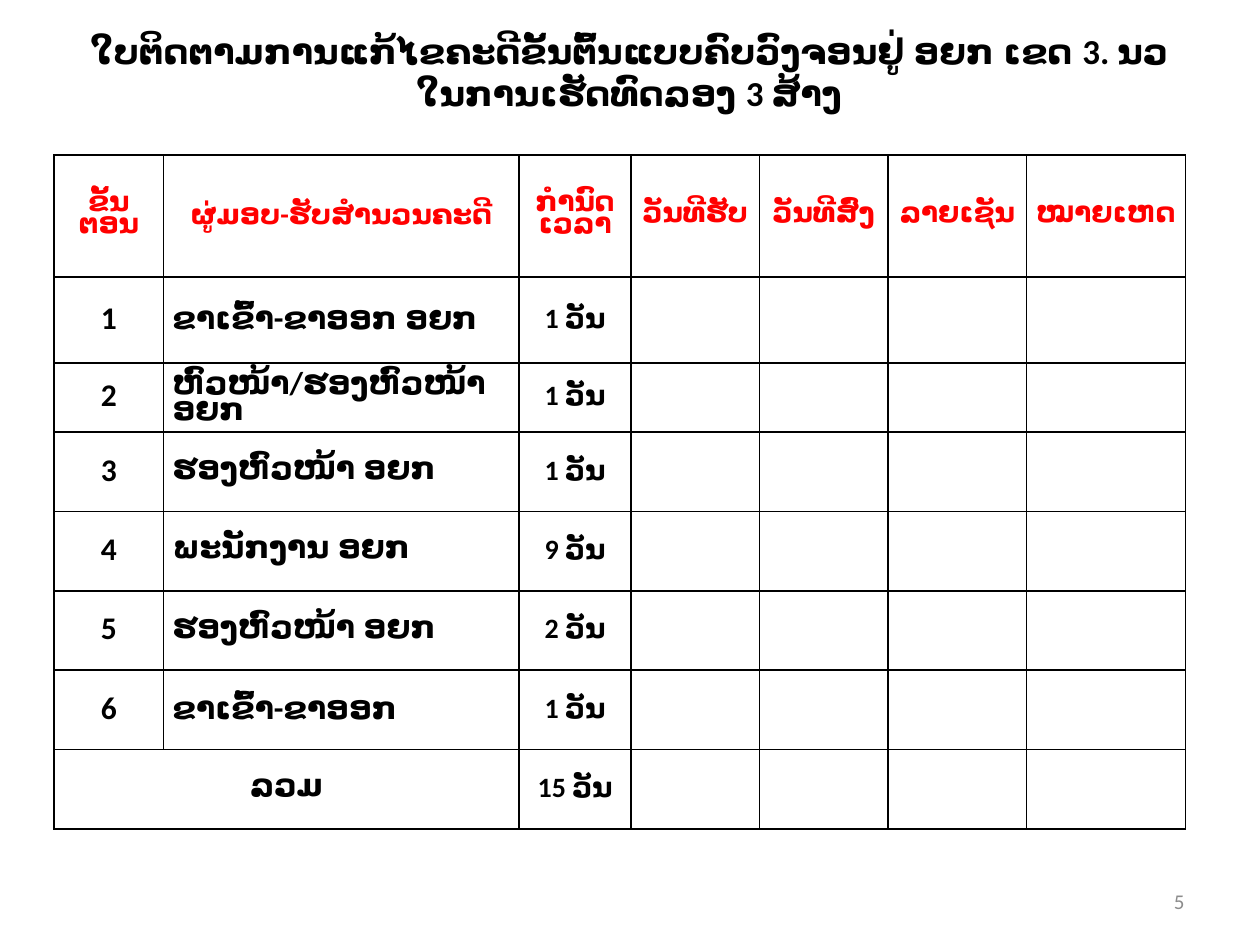
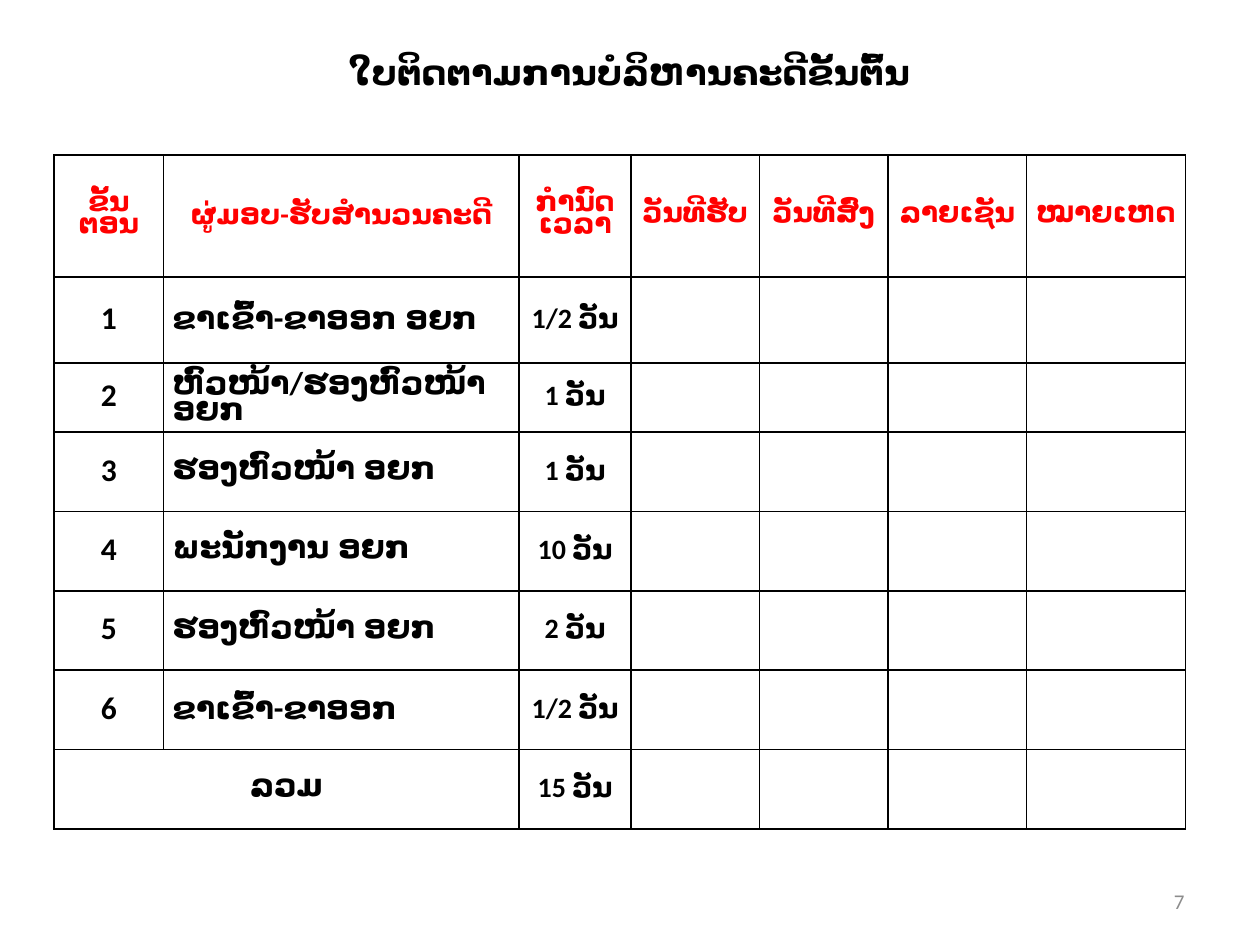
from dataclasses import dataclass

from lxml import etree
from pptx import Presentation
from pptx.dml.color import RGBColor
from pptx.enum.text import MSO_ANCHOR, PP_ALIGN
from pptx.oxml.ns import qn
from pptx.util import Inches, Pt

BLACK = RGBColor(0x00, 0x00, 0x00)
RED = RGBColor(0xFF, 0x00, 0x00)
GREY = RGBColor(0x8C, 0x8C, 0x8C)
FONT = "Calibri"
LEFT, CENTER, RIGHT = PP_ALIGN.LEFT, PP_ALIGN.CENTER, PP_ALIGN.RIGHT
MIDDLE = MSO_ANCHOR.MIDDLE
TITLE_ONLY = 5

COLUMN_WIDTHS = [0.87, 2.82, 0.89, 1.02, 1.02, 1.1, 1.26]
ROW_HEIGHTS = [0.97, 0.68, 0.55] + [0.63] * 5
HEADERS = ["ຂັ້ນ\nຕອນ", "ຜູ່ມອບ-ຮັບສໍານວນຄະດີ", "ກໍານົດເວລາ", "ວັນທີຮັບ",
           "ວັນທີສົ່ງ", "ລາຍເຊັນ", "ໝາຍເຫດ"]
HANDLERS = ["ຂາເຂົ້າ-ຂາອອກ ອຍກ", "ຫົວໜ້າ/ຮອງຫົວໜ້າ ອຍກ", "ຮອງຫົວໜ້າ ອຍກ",
            "ພະນັກງານ ອຍກ", "ຮອງຫົວໜ້າ ອຍກ", "ຂາເຂົ້າ-ຂາອອກ"]
TOTAL_LABEL = "ລວມ"
DAY = "ວັນ"


@dataclass
class TrackingForm:
    title: str
    days: list[str]
    total: str
    page: str


@dataclass
class TextStyle:
    size: int
    color: RGBColor = BLACK
    align: PP_ALIGN = CENTER
    bold: bool = True
    outlined: bool = False
    spacing: float = 1.0


TITLE = TextStyle(20)
HEADER = TextStyle(16, RED, outlined=True, spacing=0.8)
STEP = TextStyle(18, spacing=0.8)
HANDLER = TextStyle(18, align=LEFT, spacing=0.8)
DURATION = TextStyle(16, spacing=0.8)
PAGE = TextStyle(12, GREY, RIGHT, bold=False)

FORMS = [
    TrackingForm("ໃບຕິດຕາມການແກ້ໄຂຄະດີຂັ້ນຕົ້ນແບບຄົບວົງຈອນຢູ່ ອຍກ ເຂດ 3. ນວ\n"
                 "ໃນການເຮັດທົດລອງ 3 ສ້າງ",
                 ["1", "1", "1", "9", "2", "1"], "15", "5"),
    TrackingForm("ໃບຕິດຕາມການບໍລິຫານຄະດີຂັ້ນຕົ້ນ",
                 ["1/2", "1", "1", "10", "2", "1/2"], "15", "7"),
]


def add_line(parent, tag: str, width: float, color: RGBColor):
    ln = etree.SubElement(parent, qn(tag), w=str(Pt(width)))
    fill = etree.SubElement(ln, qn("a:solidFill"))
    etree.SubElement(fill, qn("a:srgbClr"), val=str(color))
    return ln


def write(tf, text: str, style: TextStyle) -> None:
    """Write one paragraph for each line of text."""
    for i, line in enumerate(text.split("\n")):
        p = tf.add_paragraph() if i else tf.paragraphs[0]
        p.alignment = style.align
        p.line_spacing = style.spacing
        r = p.add_run()
        r.text = line
        r.font.name = FONT
        r.font.size = Pt(style.size)
        r.font.bold = style.bold
        r.font.color.rgb = style.color
        if style.outlined:
            r_pr = r.font._element
            r_pr.insert(0, add_line(r_pr, "a:ln", 0.75, style.color))


def format_cell(cell) -> None:
    cell.vertical_anchor = MIDDLE
    cell.margin_left = cell.margin_right = Inches(0.07)
    cell.margin_top = cell.margin_bottom = 0
    tc_pr = cell._tc.get_or_add_tcPr()
    for side in "LRTB":
        add_line(tc_pr, f"a:ln{side}", 1, BLACK)
    cell.fill.background()


def add_tracking_table(slide, form: TrackingForm) -> None:
    frame = slide.shapes.add_table(
        len(ROW_HEIGHTS), len(COLUMN_WIDTHS), Inches(0.43), Inches(1.23),
        Inches(sum(COLUMN_WIDTHS)), Inches(sum(ROW_HEIGHTS)))
    table = frame.table
    table.first_row = table.horz_banding = False
    for column, width in zip(table.columns, COLUMN_WIDTHS):
        column.width = Inches(width)
    for row, height in zip(table.rows, ROW_HEIGHTS):
        row.height = Inches(height)
    for cell in table.iter_cells():
        format_cell(cell)

    for col, header in enumerate(HEADERS):
        write(table.cell(0, col).text_frame, header, HEADER)
    for step, (handler, days) in enumerate(zip(HANDLERS, form.days), start=1):
        write(table.cell(step, 0).text_frame, str(step), STEP)
        write(table.cell(step, 1).text_frame, handler, HANDLER)
        write(table.cell(step, 2).text_frame, f"{days} {DAY}", DURATION)

    last = len(ROW_HEIGHTS) - 1
    table.cell(last, 0).merge(table.cell(last, 1))
    write(table.cell(last, 0).text_frame, TOTAL_LABEL, STEP)
    write(table.cell(last, 2).text_frame, f"{form.total} {DAY}", DURATION)


def add_form_slide(prs, form: TrackingForm) -> None:
    slide = prs.slides.add_slide(prs.slide_layouts[TITLE_ONLY])
    add_tracking_table(slide, form)

    title = slide.shapes.title
    title.left, title.top = Inches(0.43), Inches(0.15)
    title.width, title.height = Inches(9.13), Inches(0.84)
    title.text_frame.vertical_anchor = MIDDLE
    write(title.text_frame, form.title, TITLE)

    page = slide.shapes.add_textbox(
        Inches(7.17), Inches(6.95), Inches(2.33), Inches(0.4))
    page.text_frame.word_wrap = True
    page.text_frame.vertical_anchor = MIDDLE
    write(page.text_frame, form.page, PAGE)


def main() -> None:
    prs = Presentation()
    prs.slide_width, prs.slide_height = Inches(10), Inches(7.5)
    for form in FORMS:
        add_form_slide(prs, form)
    prs.save("out.pptx")


if __name__ == "__main__":
    main()
